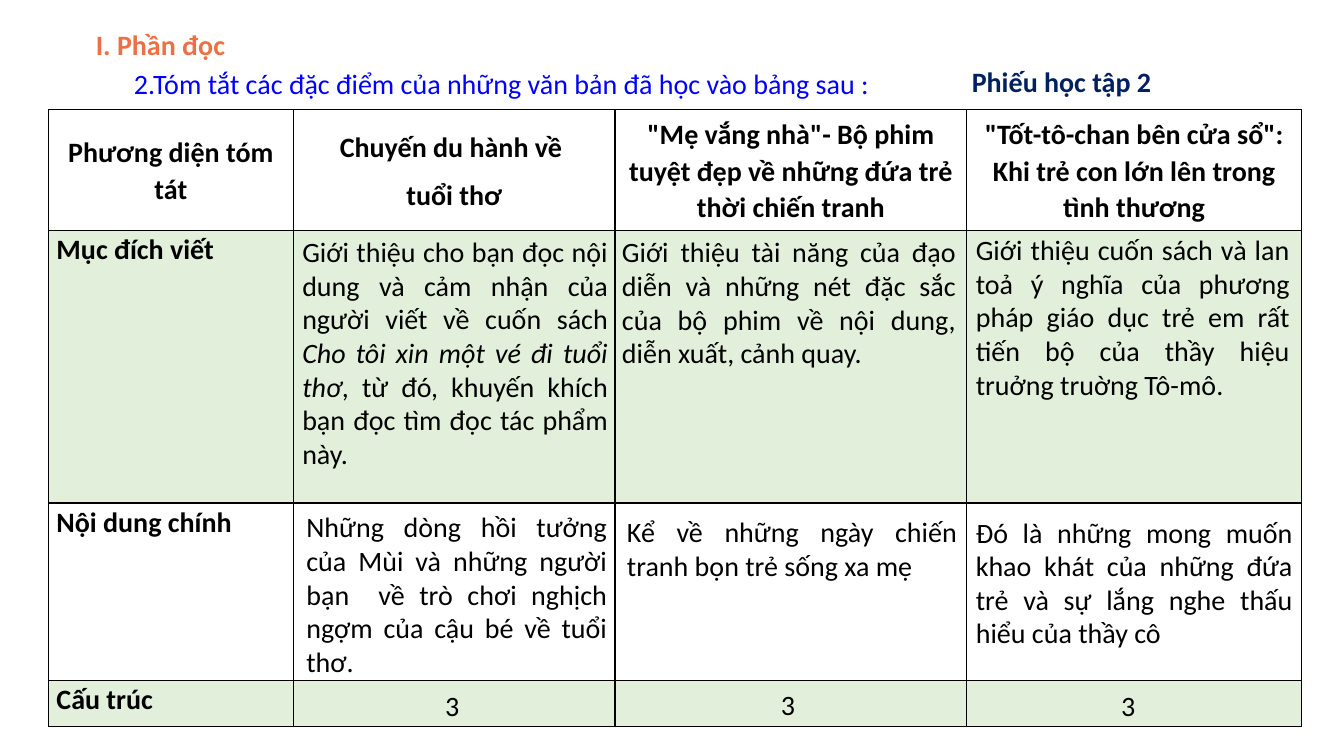
from lxml import etree
from pptx import Presentation
from pptx import util as u
from pptx.dml.color import RGBColor
from pptx.enum import text
from pptx.oxml import ns

COLORS = {"ink": "000000", "band": "E2EFDA", "heading": "EC7043",
          "task": "0000FF", "sheet": "002060"}
FONT, SIZE = "Calibri", 20
LEFT, TOP = 0.48, 1.09
COLS = [2.43, 3.19, 3.49, 3.32]
ROWS = [1.2, 2.7, 1.76, 0.46]

HEADING = "I. Phần đọc"
TASK = "2.Tóm tắt các đặc điểm của những văn bản đã học vào bảng sau :"
SHEET = "Phiếu học tập 2"
HEADERS = [
    ["Phương diện tóm tát"],
    ["Chuyến du hành về ", "tuổi thơ"],
    ['"Mẹ vắng nhà"- Bộ phim tuyệt đẹp về những đứa trẻ thời chiến tranh'],
    ['"Tốt-tô-chan bên cửa sổ": Khi trẻ con lớn lên trong tình thương'],
]
LABELS = ["Mục đích viết", "Nội dung chính", "Cấu trúc"]
ANSWERS = [
    [["Giới thiệu cho bạn đọc nội dung và cảm nhận của người viết về cuốn sách ",
      ("Cho tôi xin một vé đi tuổi thơ",),
      ", từ đó, khuyến khích bạn đọc tìm đọc tác phẩm này. "],
     ["Giới thiệu tài năng của đạo diễn và những nét đặc sắc của bộ phim về "
      "nội dung, diễn xuất, cảnh quay."],
     ["Giới thiệu cuốn sách và lan toả ý nghĩa của phương pháp giáo dục trẻ em "
      "rất tiến bộ của thầy hiệu truởng truờng Tô-mô."]],
    [["Những dòng hồi tưởng của Mùi và những người bạn  về trò chơi nghịch ngợm "
      "của cậu bé về tuổi thơ."],
     ["Kể về những ngày chiến tranh bọn trẻ sống xa mẹ"],
     ["Đó là những mong muốn khao khát của những đứa trẻ và sự lắng nghe thấu "
      "hiểu của thầy cô "]],
    [["3"], ["3"], ["3"]],
]
NUDGES = [
    [(-0.01, -0.01, 0.04), (-0.03, -0.01, 0.02), (-0.01, -0.03, -0.01)],
    [(0.03, 0.02, -0.01), (0.02, 0.07, -0.02), (-0.01, 0.07, 0.02)],
    [(-0.02, 0.03, 0), (-0.04, 0.02, 0.02), (-0.05, 0.03, -0.02)],
]
HEIGHTS = [[2.46, 1.45, 2.12], [1.78, 0.77, 1.45], [0.44, 0.44, 0.44]]

AL, AN = text.PP_ALIGN, text.MSO_ANCHOR


def write(tf, paragraphs, color="ink", bold=False, align=AL.LEFT,
          anchor=AN.TOP, spacing=None, after=0):
    tf.word_wrap = True
    tf.vertical_anchor = anchor
    for i, runs in enumerate(paragraphs):
        p = tf.paragraphs[0] if i == 0 else tf.add_paragraph()
        p.alignment = align
        p.space_before, p.space_after = u.Pt(0), u.Pt(after)
        if spacing:
            p.line_spacing = spacing
        for part in runs:
            r = p.add_run()
            r.text = part if isinstance(part, str) else part[0]
            r.font.name, r.font.size, r.font.bold = FONT, u.Pt(SIZE), bold
            r.font.italic = isinstance(part, tuple)
            r.font.color.rgb = RGBColor.from_string(COLORS[color])


def textbox(s, x, y, w, h, runs, **fmt):
    sp = s.shapes.add_textbox(*map(u.Inches, (x, y, w, h)))
    write(sp.text_frame, [runs], **fmt)
    return sp


def border(cell):
    pr = cell._tc.get_or_add_tcPr()
    for i, side in enumerate(("a:lnL", "a:lnR", "a:lnT", "a:lnB")):
        ln = etree.Element(ns.qn(side), w=str(u.Pt(1)))
        fill = etree.SubElement(ln, ns.qn("a:solidFill"))
        etree.SubElement(fill, ns.qn("a:srgbClr"), val=COLORS["ink"])
        pr.insert(i, ln)


def add_grid(s):
    frame = s.shapes.add_table(len(ROWS), len(COLS), u.Inches(LEFT), u.Inches(TOP),
                               u.Inches(sum(COLS)), u.Inches(sum(ROWS)))
    table = frame.table
    for col, w in zip(table.columns, COLS):
        col.width = u.Inches(w)
    for i, h in enumerate(ROWS):
        table.rows[i].height = u.Inches(h)
        for j in range(len(COLS)):
            cell = table.cell(i, j)
            cell.margin_left = cell.margin_right = u.Inches(0.08)
            cell.margin_top = cell.margin_bottom = 0
            if i % 2:
                cell.fill.solid()
                cell.fill.fore_color.rgb = RGBColor.from_string(COLORS["band"])
            else:
                cell.fill.background()
            border(cell)
            if i == 0:
                cell.vertical_anchor = AN.MIDDLE
                write(cell.text_frame, [[line] for line in HEADERS[j]], bold=True,
                      align=AL.CENTER, anchor=AN.MIDDLE, spacing=1.07, after=8)
            elif j == 0:
                write(cell.text_frame, [[LABELS[i - 1]]], bold=True,
                      spacing=1.07, after=8)


def add_answers(s):
    for i, answers in enumerate(ANSWERS):
        align = AL.CENTER if i == len(ANSWERS) - 1 else AL.JUSTIFY
        for j, runs in enumerate(answers):
            dx, dy, dw = NUDGES[i][j]
            x = LEFT + sum(COLS[:j + 1]) + dx
            y = TOP + sum(ROWS[:i + 1]) + dy
            textbox(s, x, y, COLS[j + 1] + dw, HEIGHTS[i][j], runs, align=align)


def main():
    prs = Presentation()
    prs.slide_width, prs.slide_height = u.Inches(13.33), u.Inches(7.5)
    s = prs.slides.add_slide(prs.slide_layouts[5])
    title = s.shapes.title
    title.left, title.top, title.width, title.height = map(
        u.Inches, (0.85, 0.12, 3.45, 0.54))
    title.text_frame.auto_size = text.MSO_AUTO_SIZE.NONE
    write(title.text_frame, [[HEADING]], color="heading", bold=True,
          align=AL.JUSTIFY, spacing=1.3)
    add_grid(s)
    textbox(s, 1.23, 0.61, 8.36, 0.44, [TASK], color="task", anchor=AN.MIDDLE)
    sheet = textbox(s, 9.54, 0.51, 3.75, 0.56, [SHEET], color="sheet", bold=True,
                    align=AL.JUSTIFY, anchor=AN.BOTTOM)
    sheet.text_frame.margin_top = sheet.text_frame.margin_bottom = u.Inches(0.1)
    add_answers(s)
    prs.save("out.pptx")


if __name__ == "__main__":
    main()
